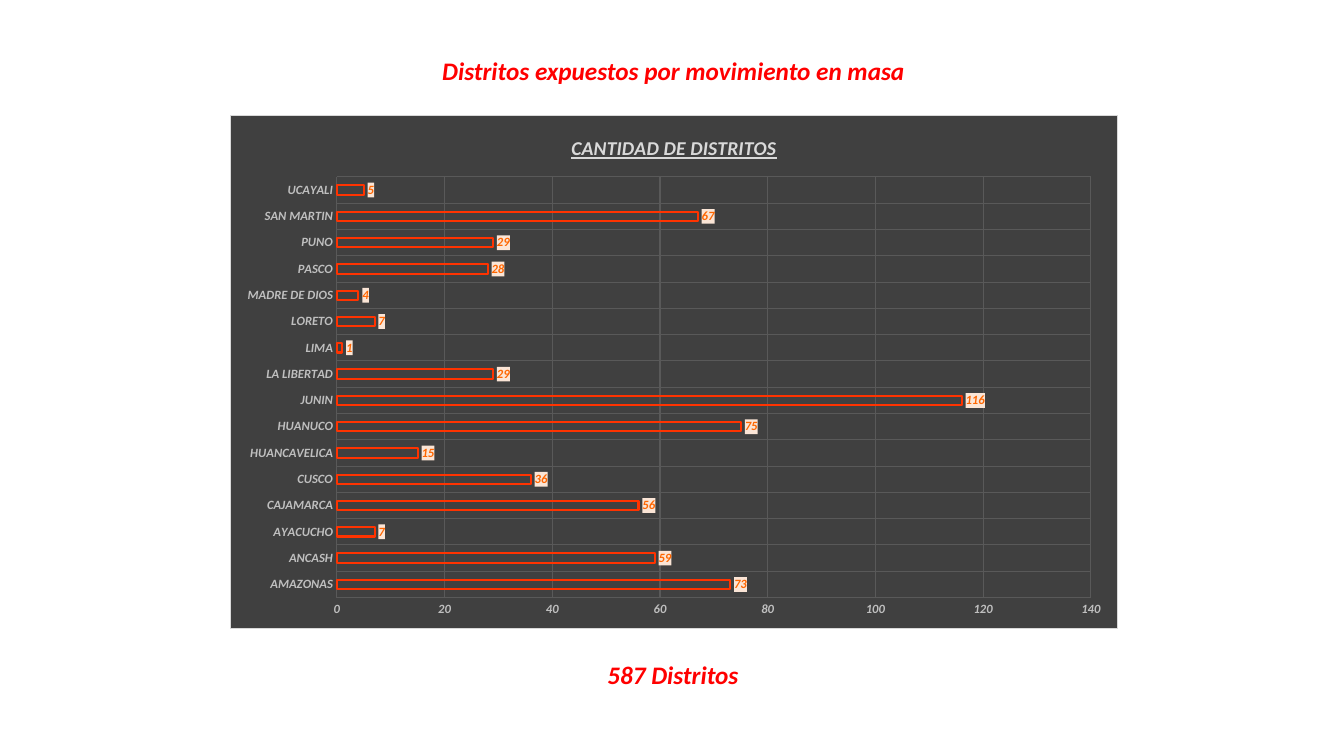
from dataclasses import dataclass

from lxml.etree import _Element as Element
from pptx import Presentation
from pptx.chart.axis import _BaseAxis as Axis
from pptx.chart.chart import Chart
from pptx.chart.data import CategoryChartData
from pptx.dml.color import RGBColor
from pptx.enum.chart import XL_CHART_TYPE as ChartType
from pptx.enum.chart import XL_LABEL_POSITION as LabelPosition
from pptx.enum.chart import XL_TICK_MARK as TickMark
from pptx.enum.text import MSO_ANCHOR as Anchor
from pptx.enum.text import PP_ALIGN as Align
from pptx.oxml import parse_xml
from pptx.oxml.ns import nsdecls, qn
from pptx.slide import Slide
from pptx.text.text import Font
from pptx.util import Inches, Pt

FONT = "Calibri"
RED = RGBColor(0xFF, 0x00, 0x00)
BAR_RED = RGBColor(0xFF, 0x33, 0x00)
LABEL_ORANGE = RGBColor(0xFF, 0x66, 0x00)
LABEL_CREAM = RGBColor(0xFB, 0xE5, 0xD6)
PANEL_GRAY = RGBColor(0x40, 0x40, 0x40)
GRID_GRAY = RGBColor(0x59, 0x59, 0x59)
AXIS_GRAY = RGBColor(0xBF, 0xBF, 0xBF)
TITLE_GRAY = RGBColor(0xD9, 0xD9, 0xD9)

DISTRICTS = {
    "AMAZONAS": 73,
    "ANCASH": 59,
    "AYACUCHO": 7,
    "CAJAMARCA": 56,
    "CUSCO": 36,
    "HUANCAVELICA": 15,
    "HUANUCO": 75,
    "JUNIN": 116,
    "LA LIBERTAD": 29,
    "LIMA": 1,
    "LORETO": 7,
    "MADRE DE DIOS": 4,
    "PASCO": 28,
    "PUNO": 29,
    "SAN MARTIN": 67,
    "UCAYALI": 5,
}


@dataclass(frozen=True)
class Caption:
    text: str
    left: float
    top: float
    width: float
    height: float = 0.4


CAPTIONS = [
    Caption("Distritos expuestos por movimiento en masa", 4.26, 0.5, 4.84),
    Caption("587 Distritos", 5.84, 6.49, 1.67),
]


def style_font(font: Font, size: float, color: RGBColor) -> None:
    font.name = FONT
    font.size = Pt(size)
    font.bold = True
    font.italic = True
    font.color.rgb = color


def add_caption(page: Slide, caption: Caption) -> None:
    box = page.shapes.add_textbox(
        Inches(caption.left), Inches(caption.top),
        Inches(caption.width), Inches(caption.height),
    )
    frame = box.text_frame
    frame.word_wrap = False
    frame.vertical_anchor = Anchor.MIDDLE
    para = frame.paragraphs[0]
    para.text = caption.text
    para.alignment = Align.CENTER
    style_font(para.font, 18, RED)


def fill_properties(fill: RGBColor, border: RGBColor | None = None) -> Element:
    line = "<a:ln><a:noFill/></a:ln>"
    if border is not None:
        line = (
            f'<a:ln w="{Pt(0.75)}"><a:solidFill><a:srgbClr val="{border}"/>'
            "</a:solidFill></a:ln>"
        )
    return parse_xml(
        f'<c:spPr {nsdecls("c", "a")}><a:solidFill><a:srgbClr val="{fill}"/>'
        f"</a:solidFill>{line}</c:spPr>"
    )


def style_axis(axis: Axis) -> None:
    axis.major_tick_mark = TickMark.NONE
    axis.minor_tick_mark = TickMark.NONE
    axis.format.line.fill.background()
    axis.has_major_gridlines = True
    grid = axis.major_gridlines.format.line
    grid.color.rgb = GRID_GRAY
    grid.width = Pt(0.75)
    style_font(axis.tick_labels.font, 9, AXIS_GRAY)


def style_bars(chart: Chart) -> None:
    plot = chart.plots[0]
    plot.vary_by_categories = False
    plot.gap_width = 182
    plot.overlap = -50
    bars = plot.series[0]
    bars.format.fill.background()
    bars.format.line.color.rgb = BAR_RED
    bars.format.line.width = Pt(1.5)
    labels = bars.data_labels
    labels.show_value = True
    labels.position = LabelPosition.OUTSIDE_END
    labels.number_format = "#,##0"
    labels.number_format_is_linked = False
    style_font(labels.font, 9, LABEL_ORANGE)
    text_properties = labels._element.find(qn("c:txPr"))
    text_properties.addprevious(fill_properties(LABEL_CREAM))


def place_plot(chart: Chart, x: float, y: float, w: float, h: float) -> None:
    area = chart._chartSpace.chart.plotArea
    for layout in area.findall(qn("c:layout")):
        area.remove(layout)
    sizes = "".join(
        f'<c:{name} val="{value}"/>'
        for name, value in (("x", x), ("y", y), ("w", w), ("h", h))
    )
    area.insert(0, parse_xml(
        f'<c:layout {nsdecls("c")}><c:manualLayout><c:layoutTarget val="inner"/>'
        f'<c:xMode val="edge"/><c:yMode val="edge"/>{sizes}'
        "</c:manualLayout></c:layout>"
    ))


def add_district_chart(page: Slide) -> None:
    data = CategoryChartData(number_format="#,##0")
    data.categories = list(DISTRICTS)
    data.add_series("Series 1", list(DISTRICTS.values()))
    chart = page.shapes.add_chart(
        ChartType.BAR_CLUSTERED,
        Inches(2.28), Inches(1.14), Inches(8.81), Inches(5.1), data,
    ).chart
    chart.has_legend = False
    chart.font.name = FONT
    chart.font.size = Pt(10)
    chart._chartSpace.chart.addnext(fill_properties(PANEL_GRAY, TITLE_GRAY))

    chart.has_title = True
    title = chart.chart_title.text_frame.paragraphs[0]
    title.text = "CANTIDAD DE DISTRITOS"
    style_font(title.font, 14, TITLE_GRAY)
    title.font.underline = True

    for axis in (chart.category_axis, chart.value_axis):
        style_axis(axis)
    chart.value_axis.minimum_scale = 0
    chart.value_axis.maximum_scale = 140
    chart.value_axis.major_unit = 20
    style_bars(chart)
    place_plot(chart, 0.12, 0.12, 0.85, 0.82)


def main() -> None:
    deck = Presentation()
    deck.slide_width = Inches(13.33)
    deck.slide_height = Inches(7.5)
    page = deck.slides.add_slide(deck.slide_layouts[6])
    for caption in CAPTIONS:
        add_caption(page, caption)
    add_district_chart(page)
    deck.save("out.pptx")


if __name__ == "__main__":
    main()
